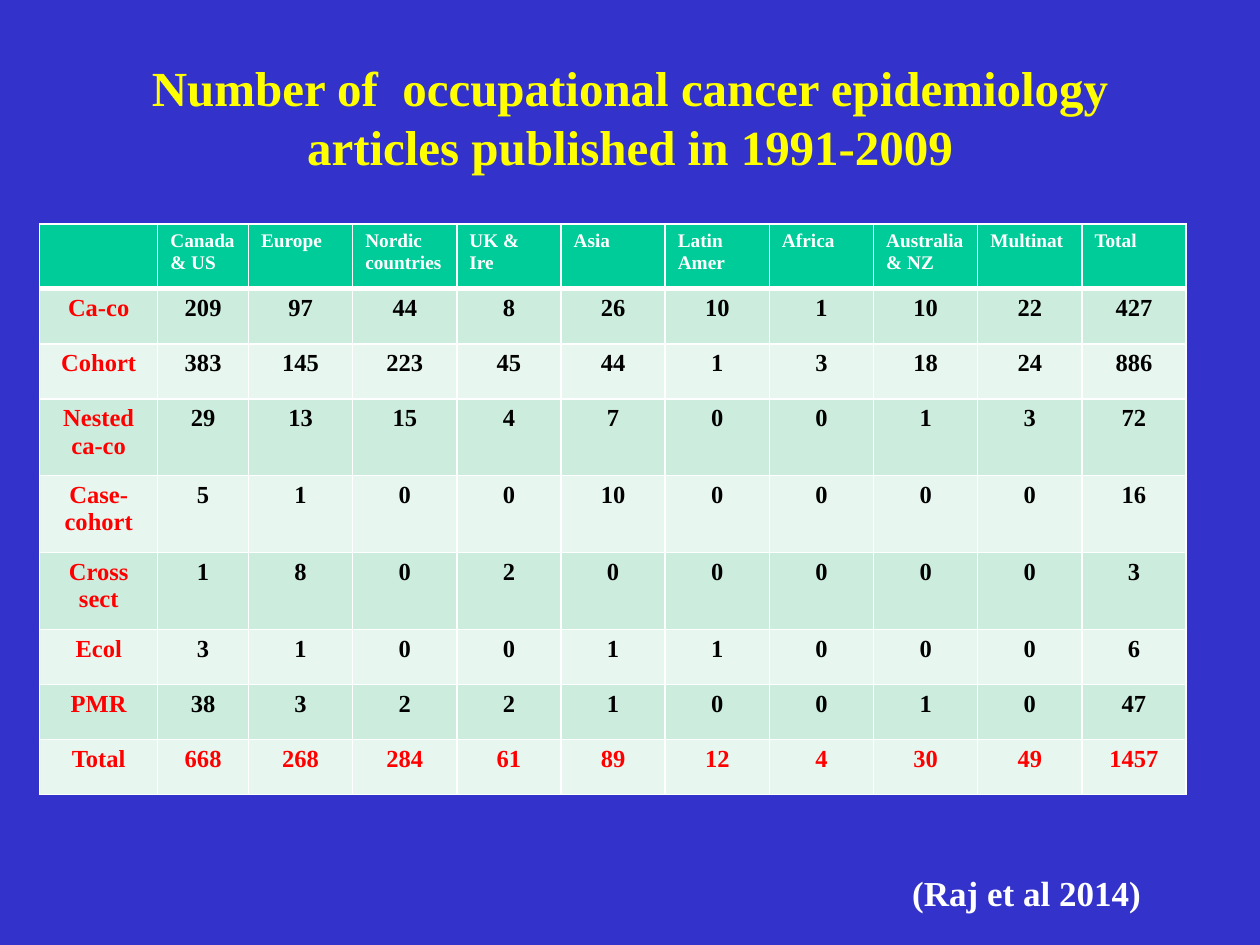
from lxml.etree import SubElement
from pptx import Presentation
from pptx.dml.color import RGBColor
from pptx.enum.text import MSO_ANCHOR, PP_ALIGN
from pptx.oxml.ns import qn
from pptx.util import Cm, Pt

BLUE = RGBColor(0x33, 0x33, 0xCC)
YELLOW = RGBColor(0xFF, 0xFF, 0x00)
WHITE = RGBColor(0xFF, 0xFF, 0xFF)
BLACK = RGBColor(0x00, 0x00, 0x00)
RED = RGBColor(0xFF, 0x00, 0x00)
GREEN = RGBColor(0x00, 0xCC, 0x99)
BANDS = RGBColor(0xCC, 0xEC, 0xDE), RGBColor(0xE7, 0xF6, 0xEF)

TITLE = "Number of  occupational cancer epidemiology articles published in 1991-2009"
SOURCE = "(Raj et al 2014)"
HEADS = ["", "Canada & US", "Europe", "Nordic countries", "UK & Ire", "Asia",
         "Latin Amer", "Africa", "Australia & NZ", "Multinat", "Total"]
COUNTS = {
    "Ca-co": [209, 97, 44, 8, 26, 10, 1, 10, 22, 427],
    "Cohort": [383, 145, 223, 45, 44, 1, 3, 18, 24, 886],
    "Nested ca-co": [29, 13, 15, 4, 7, 0, 0, 1, 3, 72],
    "Case-cohort": [5, 1, 0, 0, 10, 0, 0, 0, 0, 16],
    "Cross sect": [1, 8, 0, 2, 0, 0, 0, 0, 0, 3],
    "Ecol": [3, 1, 0, 0, 1, 1, 0, 0, 0, 6],
    "PMR": [38, 3, 2, 2, 1, 0, 0, 1, 0, 47],
    "Total": [668, 268, 284, 61, 89, 12, 4, 30, 49, 1457],
}
WIDTHS = [2.38, 1.83] + [2.1] * 9
HEIGHTS = [1.3, 1.11, 1.11, 1.55, 1.55, 1.55, 1.11, 1.11, 1.11]


def write(frame, text, size, color, align):
    """Fill a text frame with one bold paragraph."""
    para = frame.paragraphs[0]
    para.alignment = align
    run = para.add_run()
    run.text = text
    style = {"name": "Times New Roman", "size": Pt(size), "bold": True}
    for name, value in style.items():
        setattr(run.font, name, value)
    run.font.color.rgb = color


def edge(cell, sides):
    """Draw white borders from a dict of side and width in points."""
    props = cell._tc.get_or_add_tcPr()
    for side, width in sides.items():
        line = SubElement(props, qn(f"a:ln{side}"), w=str(Pt(width)))
        fill = SubElement(line, qn("a:solidFill"))
        SubElement(fill, qn("a:srgbClr"), val=str(WHITE))


def add_title(slide, left, top, width, height):
    """Place the heading in the title placeholder."""
    title = slide.shapes.title
    box = {"left": left, "top": top, "width": width, "height": height}
    for name, value in box.items():
        setattr(title, name, Cm(value))
    title.text_frame.vertical_anchor = MSO_ANCHOR.MIDDLE
    write(title.text_frame, TITLE, 28, YELLOW, PP_ALIGN.CENTER)


def add_counts(slide, left, top):
    """Place the table of article counts by study design and region."""
    rows = [HEADS] + [[name, *nums] for name, nums in COUNTS.items()]
    table = slide.shapes.add_table(
        len(rows), len(HEADS), Cm(left), Cm(top),
        Cm(sum(WIDTHS)), Cm(sum(HEIGHTS))).table
    for col, width in zip(table.columns, WIDTHS):
        col.width = Cm(width)
    for row, height in zip(table.rows, HEIGHTS):
        row.height = Cm(height)
    for r, row in enumerate(rows):
        head, last = r == 0, r == len(rows) - 1
        for c, value in enumerate(row):
            cell = table.cell(r, c)
            edge(cell, {"L": 1, "R": 1, "T": 3 if r == 1 else 1, "B": 3 if head else 1})
            cell.fill.solid()
            cell.fill.fore_color.rgb = GREEN if head else BANDS[(r - 1) % 2]
            if head:
                write(cell.text_frame, value, 11, WHITE, PP_ALIGN.LEFT)
            else:
                color = RED if last or c == 0 else BLACK
                write(cell.text_frame, str(value), 14, color, PP_ALIGN.CENTER)


def add_source(slide, left, top, width, height):
    """Place the citation below the table."""
    box = slide.shapes.add_textbox(Cm(left), Cm(top), Cm(width), Cm(height))
    box.text_frame.word_wrap = False
    box.text_frame.vertical_anchor = MSO_ANCHOR.MIDDLE
    write(box.text_frame, SOURCE, 20, WHITE, PP_ALIGN.LEFT)


def main():
    """Build the slide and save it."""
    deck = Presentation()
    deck.slide_width, deck.slide_height = Cm(25.4), Cm(19.05)
    slide = deck.slides.add_slide(deck.slide_layouts[5])
    slide.background.fill.solid()
    slide.background.fill.fore_color.rgb = BLUE
    add_title(slide, 1.27, 0.76, 22.86, 3.18)
    add_counts(slide, 0.8, 4.52)
    add_source(slide, 18.14, 17.35, 5.15, 1.27)
    deck.save("out.pptx")


if __name__ == "__main__":
    main()
